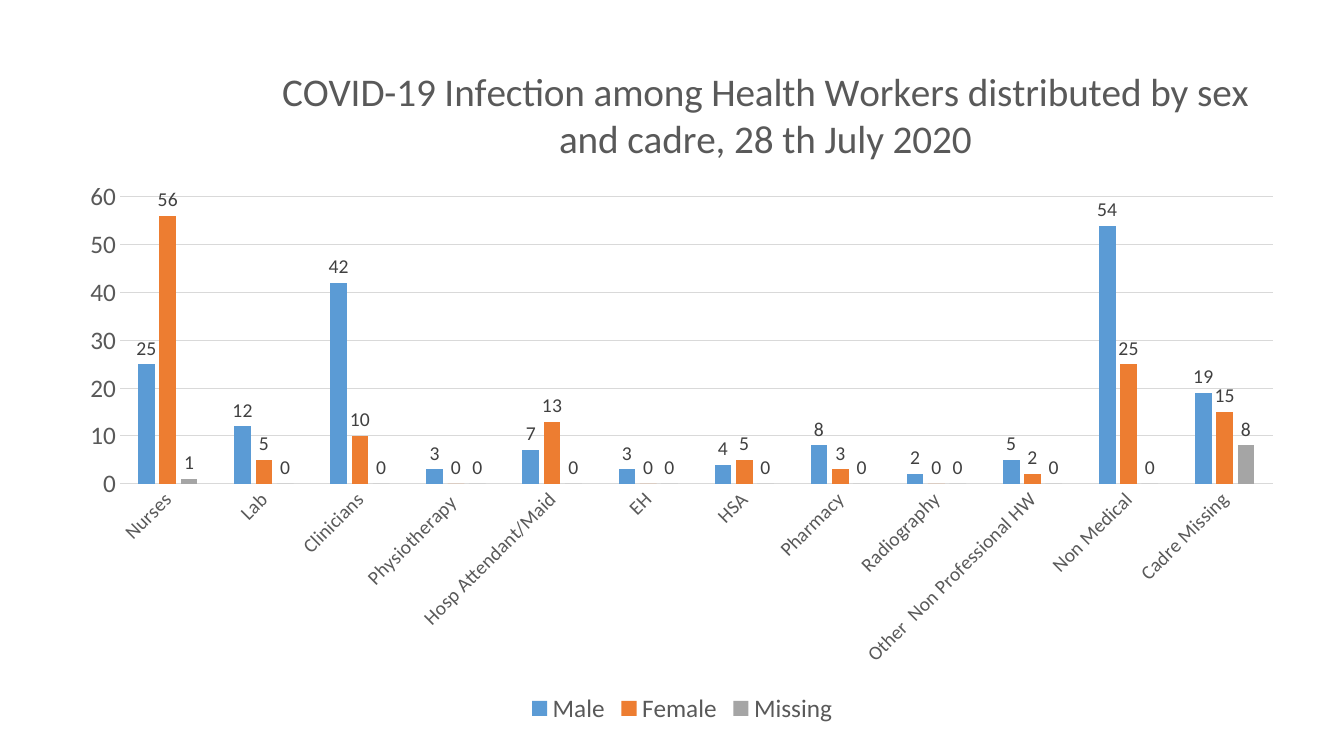
"""Build a slide with a clustered column chart of infections by sex and cadre."""
from dataclasses import dataclass

import pptx
import pptx.chart.data
import pptx.dml.color
import pptx.enum.chart
import pptx.oxml
import pptx.oxml.ns
import pptx.util

qn = pptx.oxml.ns.qn
Inches = pptx.util.Inches
Pt = pptx.util.Pt

TITLE = "COVID-19 Infection among Health Workers distributed by sex and cadre, 28 th July 2020"
CADRES = ["Nurses", "Lab", "Clinicians", "Physiotherapy ", "Hosp Attendant/Maid", "EH", "HSA",
          "Pharmacy", "Radiography", "Other  Non Professional HW", "Non Medical", "Cadre Missing"]
TEXT_GREY = "595959"
LABEL_GREY = "404040"
LINE_GREY = "D9D9D9"


@dataclass
class SexSeries:
    name: str
    color: str
    values: list[int]


SERIES = [
    SexSeries("Male", "5B9BD5", [25, 12, 42, 3, 7, 3, 4, 8, 2, 5, 54, 19]),
    SexSeries("Female", "ED7D31", [56, 5, 10, 0, 13, 0, 5, 3, 0, 2, 25, 15]),
    SexSeries("Missing", "A5A5A5", [1, 0, 0, 0, 0, 0, 0, 0, 0, 0, 0, 8]),
]


def rgb(color: str) -> pptx.dml.color.RGBColor:
    return pptx.dml.color.RGBColor.from_string(color)


def set_font(font, size: float, color: str) -> None:
    font.name = "Calibri"
    font.size = Pt(size)
    font.bold = False
    font.color.rgb = rgb(color)


def set_line(line, color: str) -> None:
    line.color.rgb = rgb(color)
    line.width = Pt(0.75)


def place(parent, index: int, inner: bool = False, **fractions: float) -> None:
    for old in parent.findall(qn("c:layout")):
        parent.remove(old)
    target = '<c:layoutTarget val="inner"/>' if inner else ""
    modes = "".join(f'<c:{k}Mode val="edge"/>' for k in "xy")
    sizes = "".join(f'<c:{k} val="{v}"/>' for k, v in fractions.items())
    parent.insert(index, pptx.oxml.parse_xml(
        f'<c:layout xmlns:c="http://schemas.openxmlformats.org/drawingml/2006/chart">'
        f"<c:manualLayout>{target}{modes}{sizes}</c:manualLayout></c:layout>"))


def style_title(chart) -> None:
    chart.has_title = True
    p = chart.chart_title.text_frame.paragraphs[0]
    p.text = TITLE
    set_font(p.font, 28, TEXT_GREY)
    place(chart.chart_title._element, 1, x=0.17, y=0.02)


def style_axes(chart) -> None:
    for axis, size in ((chart.category_axis, 14), (chart.value_axis, 18)):
        axis.major_tick_mark = pptx.enum.chart.XL_TICK_MARK.NONE
        axis.minor_tick_mark = pptx.enum.chart.XL_TICK_MARK.NONE
        set_font(axis.tick_labels.font, size, TEXT_GREY)
    cat, val = chart.category_axis, chart.value_axis
    set_line(cat.format.line, LINE_GREY)
    cat._element.find(qn("c:txPr")).find(qn("a:bodyPr")).set("rot", "-2700000")
    val.format.line.fill.background()
    val.has_major_gridlines = True
    set_line(val.major_gridlines.format.line, LINE_GREY)
    val.minimum_scale, val.maximum_scale, val.major_unit = 0, 60, 10


def style_series(plot) -> None:
    plot.gap_width = 219
    plot.overlap = -27
    plot.vary_by_categories = False
    for series, sex in zip(plot.series, SERIES):
        series.format.fill.solid()
        series.format.fill.fore_color.rgb = rgb(sex.color)
        labels = series.data_labels
        labels.show_value = True
        labels.position = pptx.enum.chart.XL_LABEL_POSITION.OUTSIDE_END
        set_font(labels.font, 14, LABEL_GREY)


def style_legend(chart) -> None:
    chart.has_legend = True
    chart.legend.position = pptx.enum.chart.XL_LEGEND_POSITION.BOTTOM
    chart.legend.include_in_layout = False
    set_font(chart.legend.font, 18, TEXT_GREY)


def main() -> None:
    prs = pptx.Presentation()
    prs.slide_width, prs.slide_height = Inches(13.33), Inches(7.5)
    s = prs.slides.add_slide(prs.slide_layouts[6])
    data = pptx.chart.data.CategoryChartData()
    data.categories = CADRES
    for sex in SERIES:
        data.add_series(sex.name, sex.values)
    chart = s.shapes.add_chart(
        pptx.enum.chart.XL_CHART_TYPE.COLUMN_CLUSTERED,
        Inches(0.65), Inches(0.44), Inches(12.23), Inches(6.79), data).chart
    set_font(chart.font, 10, "000000")
    style_title(chart)
    style_axes(chart)
    style_series(chart.plots[0])
    style_legend(chart)
    plot_area = chart._chartSpace.chart.plotArea
    place(plot_area, 0, inner=True, x=0.044, y=0.223, w=0.935, h=0.419)
    prs.save("out.pptx")


if __name__ == "__main__":
    main()
